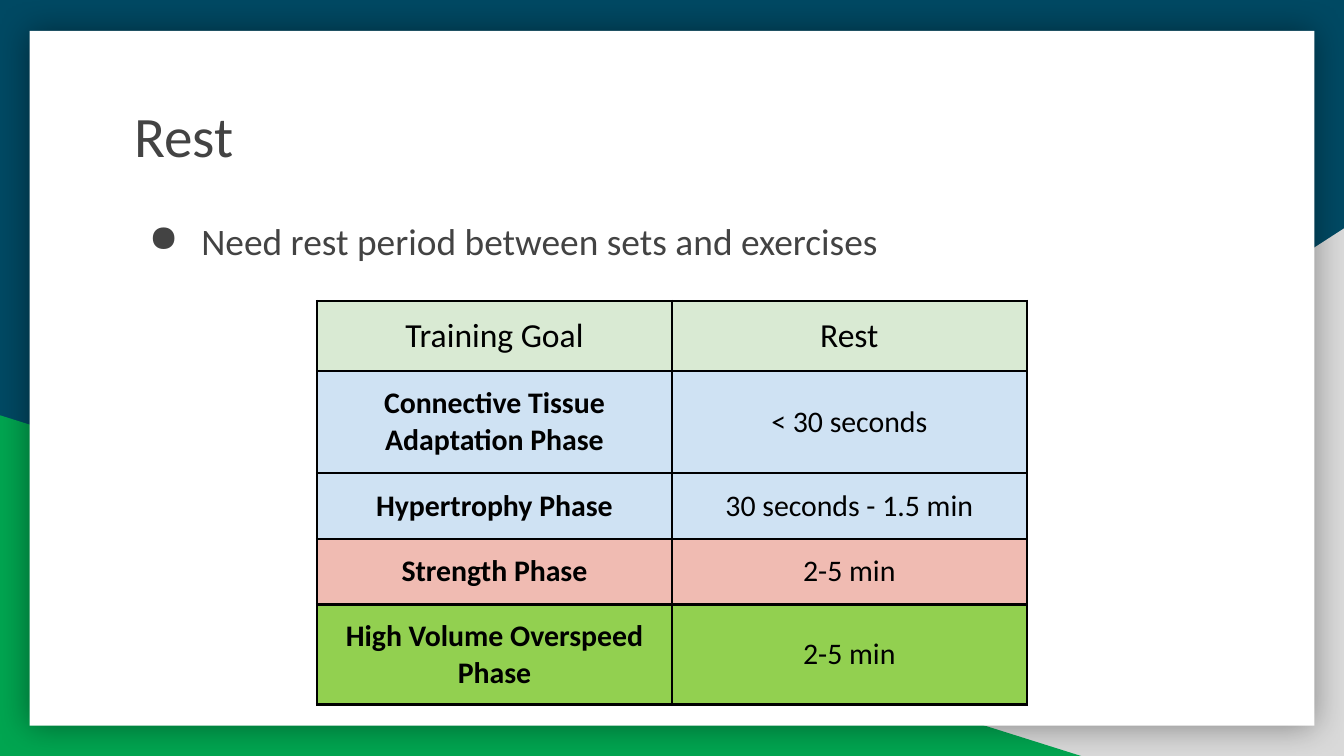
from lxml import etree
from pptx import Presentation
from pptx.dml.color import RGBColor
from pptx.enum.shapes import MSO_SHAPE
from pptx.enum.text import MSO_ANCHOR, MSO_AUTO_SIZE, PP_ALIGN
from pptx.oxml.ns import qn
from pptx.util import Inches, Pt

TRIANGLE, RECTANGLE = MSO_SHAPE.RIGHT_TRIANGLE, MSO_SHAPE.RECTANGLE
TOP, MIDDLE = MSO_ANCHOR.TOP, MSO_ANCHOR.MIDDLE
LEFT, CENTER = PP_ALIGN.LEFT, PP_ALIGN.CENTER
NO_AUTOFIT = MSO_AUTO_SIZE.NONE

TITLE = "Rest"
POINT = "Need rest period between sets and exercises"
# training goal, rest, fill name, row height
ROWS = [
    ("Training Goal", "Rest", "header", 0.52),
    ("Connective Tissue Adaptation Phase", "< 30 seconds", "early", 0.76),
    ("Hypertrophy Phase", "30 seconds - 1.5 min", "early", 0.49),
    ("Strength Phase", "2-5 min", "strength", 0.49),
    ("High Volume Overspeed Phase", "2-5 min", "overspeed", 0.73),
]

THEME = {
    "font": "Calibri",
    "sizes": {"title": 30.6, "point": 20, "header": 18, "cell": 16},
    "colors": {
        "background": "004963", "gray": "D9D9D9", "green": "00A550",
        "card": "FFFFFF", "text": "434343", "black": "000000",
        "header": "D9EAD3", "early": "CFE2F3",
        "strength": "F0BBB2", "overspeed": "92D050",
    },
}
SLIDE_WIDTH = 10
SLIDE_HEIGHT = SLIDE_WIDTH * 9 / 16
MARGIN_LEFT, TEXT_WIDTH = 0.9, 8.21
INSET = 0.1
COLUMN_WIDTH = 2.64
TABLE_TOP = 2.24
BORDER = 1.5


def color(name):
    return RGBColor.from_string(THEME["colors"][name])


def add_child(parent, tag, **attributes):
    return etree.SubElement(parent, qn(tag), {k: str(v) for k, v in attributes.items()})


def add_color(parent, name):
    return add_child(parent, "a:srgbClr", val=THEME["colors"][name])


def add_panel(slide, kind, left, top, width, height, fill):
    panel = slide.shapes.add_shape(
        kind, Inches(left), Inches(top), Inches(width), Inches(height))
    panel.shadow.inherit = False
    panel.fill.solid()
    panel.fill.fore_color.rgb = color(fill)
    panel.line.fill.background()
    return panel


def add_glow_shadow(shape):
    """Give the shape a soft shadow on all sides."""
    effects = shape._element.spPr.find(qn("a:effectLst"))
    shadow = add_child(effects, "a:outerShdw", blurRad=Pt(18), dist=0, dir=0,
                       algn="ctr", rotWithShape=0)
    add_child(add_color(shadow, "black"), "a:alpha", val=40000)


def set_text(frame, text, size, ink, align=LEFT, bold=False):
    frame.word_wrap = True
    paragraph = frame.paragraphs[0]
    paragraph.text = text
    paragraph.alignment = align
    font = paragraph.font
    font.name, font.size, font.bold = THEME["font"], Pt(THEME["sizes"][size]), bold
    font.color.rgb = color(ink)
    return paragraph


def set_box(box, left, top, width, height):
    box.left, box.top = Inches(left), Inches(top)
    box.width, box.height = Inches(width), Inches(height)
    frame = box.text_frame
    frame.auto_size = NO_AUTOFIT
    frame.vertical_anchor = TOP
    frame.margin_left = frame.margin_right = Inches(INSET)
    frame.margin_top = frame.margin_bottom = Inches(INSET)
    return frame


def add_backdrop(slide):
    slide.background.fill.solid()
    slide.background.fill.fore_color.rgb = color("background")
    gray = add_panel(slide, TRIANGLE, 3.92, 1.7, 6.08, 3.93, "gray")
    gray._element.spPr.xfrm.set("flipH", "1")
    add_panel(slide, TRIANGLE, 0, 3.09, 8.06, 2.54, "green")
    add_glow_shadow(add_panel(slide, RECTANGLE, 0.22, 0.23, 9.56, 5.17, "card"))


def add_title(slide):
    title = slide.shapes.title
    slide.shapes._spTree.append(title._element)  # in front of the card
    frame = set_box(title, MARGIN_LEFT, 0.65, TEXT_WIDTH, 0.7)
    set_text(frame, TITLE, "title", "text")


def add_point(slide):
    box = slide.shapes.add_textbox(0, 0, 0, 0)
    frame = set_box(box, MARGIN_LEFT, 1.47, TEXT_WIDTH, 2.68)
    properties = frame.paragraphs[0]._p.get_or_add_pPr()
    properties.set("marL", str(Inches(0.5)))
    properties.set("indent", str(Inches(-0.39)))
    add_color(add_child(properties, "a:buClr"), "text")
    add_child(properties, "a:buChar", char="●")
    set_text(frame, POINT, "point", "text").line_spacing = 1.15


def set_borders(cell):
    properties = cell._tc.get_or_add_tcPr()
    for position, side in enumerate(("a:lnL", "a:lnR", "a:lnT", "a:lnB")):
        line = add_child(properties, side, w=Pt(BORDER))
        add_color(add_child(line, "a:solidFill"), "black")
        properties.insert(position, line)


def add_rest_table(slide):
    width = 2 * COLUMN_WIDTH
    height = sum(row[-1] for row in ROWS)
    table = slide.shapes.add_table(
        len(ROWS), 2, Inches((SLIDE_WIDTH - width) / 2), Inches(TABLE_TOP),
        Inches(width), Inches(height)).table
    table.first_row = table.horz_banding = False
    for row_index, (goal, rest, fill, row_height) in enumerate(ROWS):
        table.rows[row_index].height = Inches(row_height)
        for column_index, text in enumerate((goal, rest)):
            cell = table.cell(row_index, column_index)
            cell.vertical_anchor = MIDDLE
            cell.margin_left = cell.margin_right = Inches(INSET)
            cell.margin_top = cell.margin_bottom = Inches(INSET)
            cell.fill.solid()
            cell.fill.fore_color.rgb = color(fill)
            set_borders(cell)
            size = "header" if row_index == 0 else "cell"
            is_phase = row_index > 0 and column_index == 0
            set_text(cell.text_frame, text, size, "black", CENTER, is_phase)


def main():
    deck = Presentation()
    deck.slide_width, deck.slide_height = Inches(SLIDE_WIDTH), Inches(SLIDE_HEIGHT)
    slide = deck.slides.add_slide(deck.slide_layouts[5])
    add_backdrop(slide)
    add_title(slide)
    add_point(slide)
    add_rest_table(slide)
    deck.save("out.pptx")


if __name__ == "__main__":
    main()
